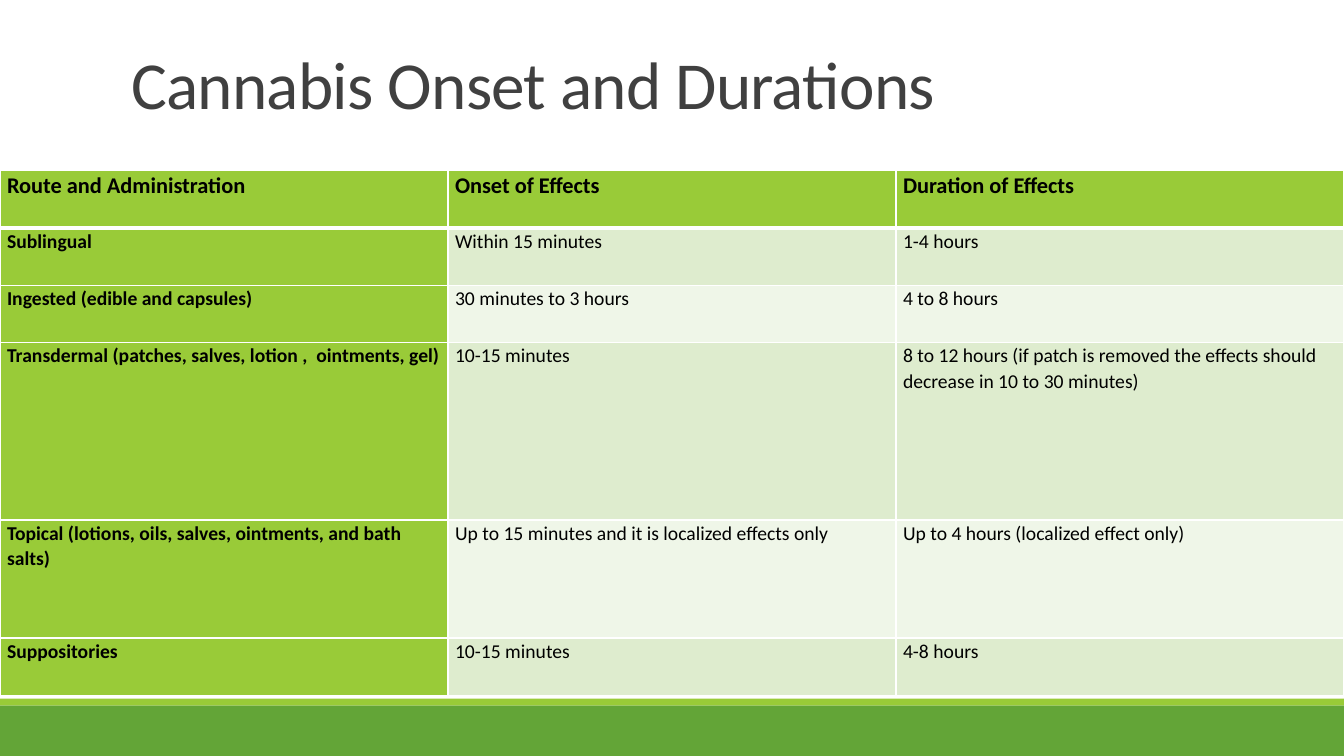
from dataclasses import dataclass
from lxml.etree import SubElement
from pptx import Presentation
from pptx.dml.color import RGBColor
from pptx.enum.shapes import MSO_SHAPE
from pptx.enum.text import MSO_ANCHOR, MSO_AUTO_SIZE, PP_ALIGN
from pptx.oxml.ns import qn
from pptx.util import Inches, Pt


@dataclass(frozen=True)
class Theme:
    font: str = "Calibri"
    title: str = "404040"
    text: str = "000000"
    lime: str = "99CB38"
    green: str = "63A537"
    line: str = "FFFFFF"
    bands: tuple = ("DEECCE", "EFF6E8")
    big: int = 48
    head: int = 16
    body: int = 14


THEME = Theme()
WIDE, HIGH = 13.33, 7.5
HEIGHTS = (0.57, 0.57, 0.57, 1.76, 1.17, 0.57)
ROWS = (
    ("Route and Administration", "Onset of Effects", "Duration of Effects"),
    ("Sublingual", "Within 15 minutes", "1-4 hours"),
    ("Ingested (edible and capsules)", "30 minutes to 3 hours", "4 to 8 hours"),
    ("Transdermal (patches, salves, lotion ,  ointments, gel)", "10-15 minutes",
     "8 to 12 hours (if patch is removed the effects should decrease in 10 to 30 minutes)"),
    ("Topical (lotions, oils, salves, ointments, and bath salts)",
     "Up to 15 minutes and it is localized effects only",
     "Up to 4 hours (localized effect only)"),
    ("Suppositories", "10-15 minutes", "4-8 hours"),
)


def paint(fill, color):
    fill.solid()
    fill.fore_color.rgb = RGBColor.from_string(color)


def style(para, size, color, bold, space):
    para.line_spacing = space
    para.alignment = PP_ALIGN.LEFT
    for run in para.runs:
        font = run.font
        font.name, font.size, font.bold = THEME.font, Pt(size), bold
        font.color.rgb = RGBColor.from_string(color)


def add_foot(slide, box):
    left, top, width, height = box
    edge = height * 0.125
    bars = ((top, edge, THEME.lime), (top + edge, height - edge, THEME.green))
    for y, tall, color in bars:
        bar = slide.shapes.add_shape(
            MSO_SHAPE.RECTANGLE, Inches(left), Inches(y), Inches(width), Inches(tall))
        bar.shadow.inherit = False
        bar.line.fill.background()
        paint(bar.fill, color)


def add_title(slide, box, text):
    title = slide.shapes.title
    title.left, title.top, title.width, title.height = map(Inches, box)
    frame = title.text_frame
    frame.text = text
    frame.word_wrap = True
    frame.auto_size = MSO_AUTO_SIZE.NONE
    frame.vertical_anchor = MSO_ANCHOR.BOTTOM
    para = frame.paragraphs[0]
    style(para, THEME.big, THEME.title, False, 0.85)
    para.runs[0].font._element.set("spc", "-50")


def add_edges(cell, widths):
    props = cell._tc.get_or_add_tcPr()
    for side, width in zip("LRTB", widths):
        line = SubElement(props, qn(f"a:ln{side}"), w=str(Pt(width)))
        solid = SubElement(line, qn("a:solidFill"))
        SubElement(solid, qn("a:srgbClr"), val=THEME.line)


def fill_cell(cell, text, row, col):
    head = row == 0
    lead = head or col == 0
    cell.margin_left = cell.margin_right = Inches(0.07)
    cell.margin_top = cell.margin_bottom = 0
    cell.vertical_anchor = MSO_ANCHOR.TOP
    cell.text_frame.text = text
    size = THEME.head if head else THEME.body
    style(cell.text_frame.paragraphs[0], size, THEME.text, lead, 1.07)
    add_edges(cell, (1, 1, 3 if row == 1 else 1, 3 if head else 1))
    paint(cell.fill, THEME.lime if lead else THEME.bands[(row - 1) % 2])


def add_grid(slide, box, rows, heights):
    frame = slide.shapes.add_table(len(rows), len(rows[0]), *map(Inches, box))
    table = frame.table
    for col in table.columns:
        col.width = Inches(box[2] / len(rows[0]))
    share = box[3] / sum(heights)
    for r, (texts, height) in enumerate(zip(rows, heights)):
        table.rows[r].height = Inches(height * share)
        for c, text in enumerate(texts):
            fill_cell(table.cell(r, c), text, r, c)


def main():
    deck = Presentation()
    deck.slide_width, deck.slide_height = Inches(WIDE), Inches(HIGH)
    slide = deck.slides.add_slide(deck.slide_layouts[5])
    paint(slide.background.fill, THEME.line)
    add_foot(slide, (0, 6.93, WIDE, HIGH - 6.93))
    add_grid(slide, (0, 1.69, WIDE, 5.21), ROWS, HEIGHTS)
    add_title(slide, (1.2, 0.31, 11, 0.96), "Cannabis Onset and Durations")
    deck.save("out.pptx")


if __name__ == "__main__":
    main()
